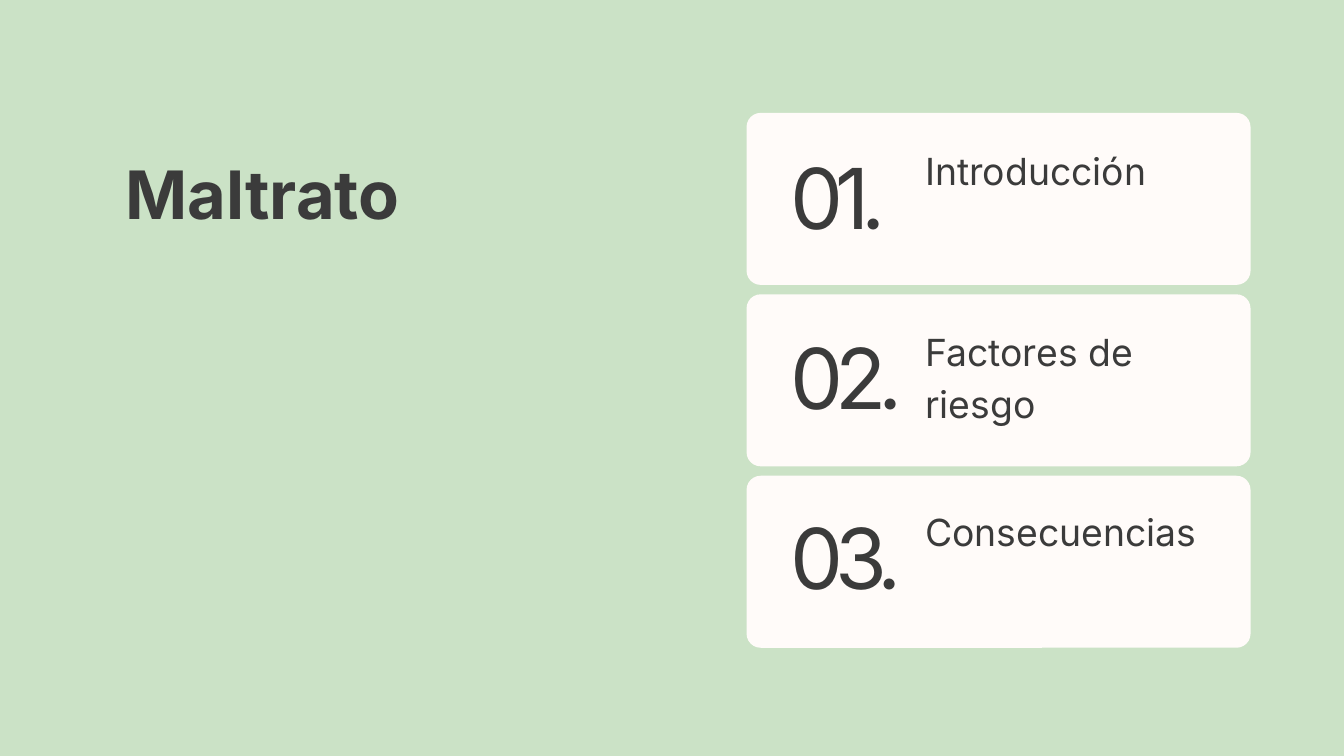
from pptx import Presentation
from pptx.dml.color import RGBColor
from pptx.enum.shapes import MSO_SHAPE
from pptx.enum.text import MSO_ANCHOR, MSO_AUTO_SIZE, PP_ALIGN
from pptx.util import Inches, Pt

GREEN = RGBColor(0xCB, 0xE2, 0xC6)
CREAM = RGBColor(0xFF, 0xFB, 0xF9)
CHARCOAL = RGBColor(0x3B, 0x3B, 0x3B)
FONT = "Inter"
TOPICS = ["Introducción", "Factores de riesgo", "Consecuencias"]
CARD_PITCH = 2.7
TEXT_PITCH = 2.68
CARD_HEIGHT = 2.56
CORNER_RADIUS = 0.21


def place(shape, left, top, width, height):
    shape.left, shape.top = Inches(left), Inches(top)
    shape.width, shape.height = Inches(width), Inches(height)


def write_text(shape, text, size, line_height, bold=False, tracking=None):
    frame = shape.text_frame
    frame.word_wrap = True
    frame.auto_size = MSO_AUTO_SIZE.NONE
    frame.vertical_anchor = MSO_ANCHOR.TOP
    frame.margin_left = frame.margin_right = 0
    frame.margin_top = frame.margin_bottom = 0
    para = frame.paragraphs[0]
    para.alignment = PP_ALIGN.LEFT
    para.line_spacing = Pt(line_height)
    para.space_before = Pt(0)
    span = para.add_run()
    span.text = text
    span.font.name = FONT
    span.font.size = Pt(size)
    span.font.bold = bold
    span.font.color.rgb = CHARCOAL
    if tracking is not None:
        span.font._element.set("spc", str(round(tracking * 100)))


def add_title(page, text):
    title = page.shapes.title
    place(title, 1.87, 2.47, 7.69, 1.05)
    write_text(title, text, size=71.5, line_height=71.5, bold=True)


def add_card(page, top):
    card = page.shapes.add_shape(
        MSO_SHAPE.ROUNDED_RECTANGLE,
        Inches(11.11), Inches(top), Inches(7.5), Inches(CARD_HEIGHT),
    )
    card.adjustments[0] = CORNER_RADIUS / CARD_HEIGHT
    card.shadow.inherit = False
    card.fill.solid()
    card.fill.fore_color.rgb = CREAM
    card.line.fill.background()


def add_text(page, text, left, top, width, height, **style):
    box = page.shapes.add_textbox(
        Inches(left), Inches(top), Inches(width), Inches(height)
    )
    write_text(box, text, **style)


def add_topic(page, index, topic):
    add_card(page, 1.68 + index * CARD_PITCH)
    shift = index * TEXT_PITCH
    add_text(page, f"{index + 1:02}.", 11.76, 2.46 + shift, 2, 1.28,
             size=90, line_height=86.4, tracking=-8.6)
    add_text(page, topic, 13.77, 2.1 + shift, 4.31, 1.51,
             size=40, line_height=56)


def main():
    deck = Presentation()
    deck.slide_width, deck.slide_height = Inches(20), Inches(11.25)
    page = deck.slides.add_slide(deck.slide_layouts.get_by_name("Title Only"))
    page.background.fill.solid()
    page.background.fill.fore_color.rgb = GREEN
    add_title(page, "Maltrato")
    for index, topic in enumerate(TOPICS):
        add_topic(page, index, topic)
    deck.save("out.pptx")


if __name__ == "__main__":
    main()
